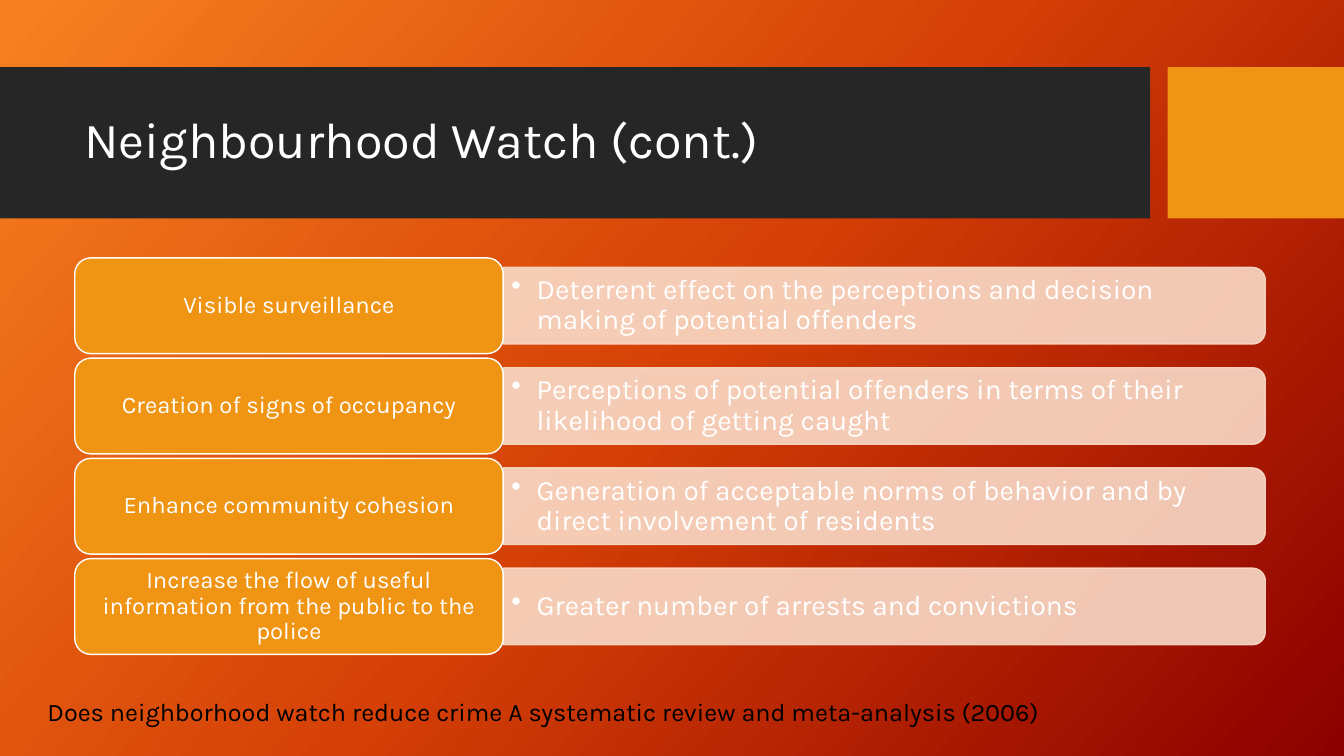
from copy import deepcopy
from dataclasses import dataclass

from lxml import etree
from pptx import Presentation
from pptx.dml.color import RGBColor
from pptx.enum.shapes import MSO_SHAPE
from pptx.enum.text import MSO_ANCHOR, PP_ALIGN
from pptx.oxml.ns import qn
from pptx.util import Pt

RECT = MSO_SHAPE.RECTANGLE
ROUNDED = MSO_SHAPE.ROUNDED_RECTANGLE
ROUNDED_END = MSO_SHAPE.ROUND_2_SAME_RECTANGLE
MIDDLE, TOP = MSO_ANCHOR.MIDDLE, MSO_ANCHOR.TOP
LEFT, CENTER = PP_ALIGN.LEFT, PP_ALIGN.CENTER


@dataclass(frozen=True)
class Theme:
    font: str = "Karla"
    white: str = "FFFFFF"
    black: str = "000000"
    band: str = "262626"
    accent: str = "F09415"
    label: str = "EF9413"
    bar: str = "F9DBC8"
    bar_alpha: int = 90
    background: tuple = ((0, "F78121"), (0.5, "D54006"), (1, "8C0000"))
    angle: int = 318
    title_size: int = 36
    detail_size: int = 20
    label_size: int = 17
    source_size: int = 18


THEME = Theme()

ROWS = [
    ("Visible surveillance",
     "Deterrent effect on the perceptions and decision making of potential offenders"),
    ("Creation of signs of occupancy",
     "Perceptions of potential offenders in terms of their likelihood of getting caught"),
    ("Enhance community cohesion",
     "Generation of acceptable norms of behavior and by direct involvement of residents"),
    ("Increase the flow of useful information from the public to the police",
     "Greater number of arrests and convictions"),
]


def paint_background(slide):
    fill = slide.background.fill
    fill.gradient()
    fill.gradient_angle = THEME.angle
    stops = slide.element.xpath(".//p:bg//a:gsLst")[0]
    stops.append(deepcopy(stops[-1]))
    for stop, (position, color) in zip(fill.gradient_stops, THEME.background):
        stop.position = position
        stop.color.rgb = RGBColor.from_string(color)


def add_box(slide, kind, box, fill, line=None):
    sp = slide.shapes.add_shape(kind, *map(Pt, box))
    sp.shadow.inherit = False
    sp.fill.solid()
    sp.fill.fore_color.rgb = RGBColor.from_string(fill)
    if line:
        sp.line.color.rgb = RGBColor.from_string(line)
        sp.line.width = Pt(1)
    else:
        sp.line.fill.background()
    return sp


def write(sp, text, size, color, insets, anchor=MIDDLE, align=LEFT, spacing=0.9):
    tf = sp.text_frame
    tf.word_wrap = True
    tf.vertical_anchor = anchor
    tf.margin_left = tf.margin_right = Pt(insets[0])
    tf.margin_top = tf.margin_bottom = Pt(insets[1])
    p = tf.paragraphs[0]
    p.alignment = align
    p.line_spacing = spacing
    r = p.add_run()
    r.text = text
    r.font.name = THEME.font
    r.font.size = Pt(size)
    r.font.color.rgb = RGBColor.from_string(color)
    return p


def add_bullet(p, color, indent):
    pPr = p._p.get_or_add_pPr()
    pPr.set("marL", str(Pt(indent)))
    pPr.set("indent", str(-Pt(indent)))
    bu_color = etree.SubElement(pPr, qn("a:buClr"))
    etree.SubElement(bu_color, qn("a:srgbClr"), val=color)
    etree.SubElement(pPr, qn("a:buChar"), char="•")


def set_alpha(sp, percent):
    for color in sp._element.spPr.iter(qn("a:srgbClr")):
        etree.SubElement(color, qn("a:alpha"), val=str(percent * 1000))


def add_header(slide, box, title):
    x, y, w, h = box
    band_w, square_w = 821.5, 126
    add_box(slide, RECT, (x, y, band_w, h), THEME.band)
    add_box(slide, RECT, (x + w - square_w, y, square_w, h), THEME.accent)
    sp = slide.shapes.add_textbox(Pt(x + 53.3), Pt(y + 11), Pt(756.7), Pt(85))
    write(sp, title, THEME.title_size, THEME.white, (7.2, 3.6))


def add_row(slide, box, label, detail):
    x, y, w, h = box
    label_w, bar_h = 306, 54.7
    bar_x, bar_w = x + label_w, w - label_w
    middle = y + h / 2
    upright = (bar_x + (bar_w - bar_h) / 2, middle - bar_w / 2, bar_h, bar_w)
    bar = add_box(slide, ROUNDED_END, upright, THEME.bar, THEME.bar)
    bar.rotation = 90
    set_alpha(bar, THEME.bar_alpha)

    text_h = 49
    sp = slide.shapes.add_textbox(
        Pt(bar_x + 0.5), Pt(middle - text_h / 2), Pt(bar_w - 2.9), Pt(text_h))
    p = write(sp, detail, THEME.detail_size, THEME.white, (5.4, 2.7))
    add_bullet(p, THEME.white, 18)

    sp = add_box(slide, ROUNDED, (x, y, label_w, h), THEME.label, THEME.white)
    write(sp, label, THEME.label_size, THEME.white, (5.1, 2.6), align=CENTER)


def add_rows(slide, box, rows):
    x, y, w, h = box
    gap = 3.2
    row_h = (h - gap * (len(rows) - 1)) / len(rows)
    for i, (label, detail) in enumerate(rows):
        add_row(slide, (x, y + i * (row_h + gap), w, row_h), label, detail)


def add_source(slide, box, text):
    sp = slide.shapes.add_textbox(*map(Pt, box))
    write(sp, text, THEME.source_size, THEME.black, (7.2, 3.6), anchor=TOP, spacing=1.07)


def main():
    prs = Presentation()
    prs.slide_width, prs.slide_height = Pt(960), Pt(540)
    slide = prs.slides.add_slide(prs.slide_layouts[6])
    paint_background(slide)
    add_header(slide, (0, 48, 960, 108), "Neighbourhood Watch (cont.)")
    add_rows(slide, (53.4, 184.2, 850.4, 283.2), ROWS)
    add_source(slide, (26.8, 492.5, 903.6, 29),
               "Does neighborhood watch reduce crime A systematic review and meta-analysis (2006)")
    prs.save("out.pptx")


if __name__ == "__main__":
    main()
